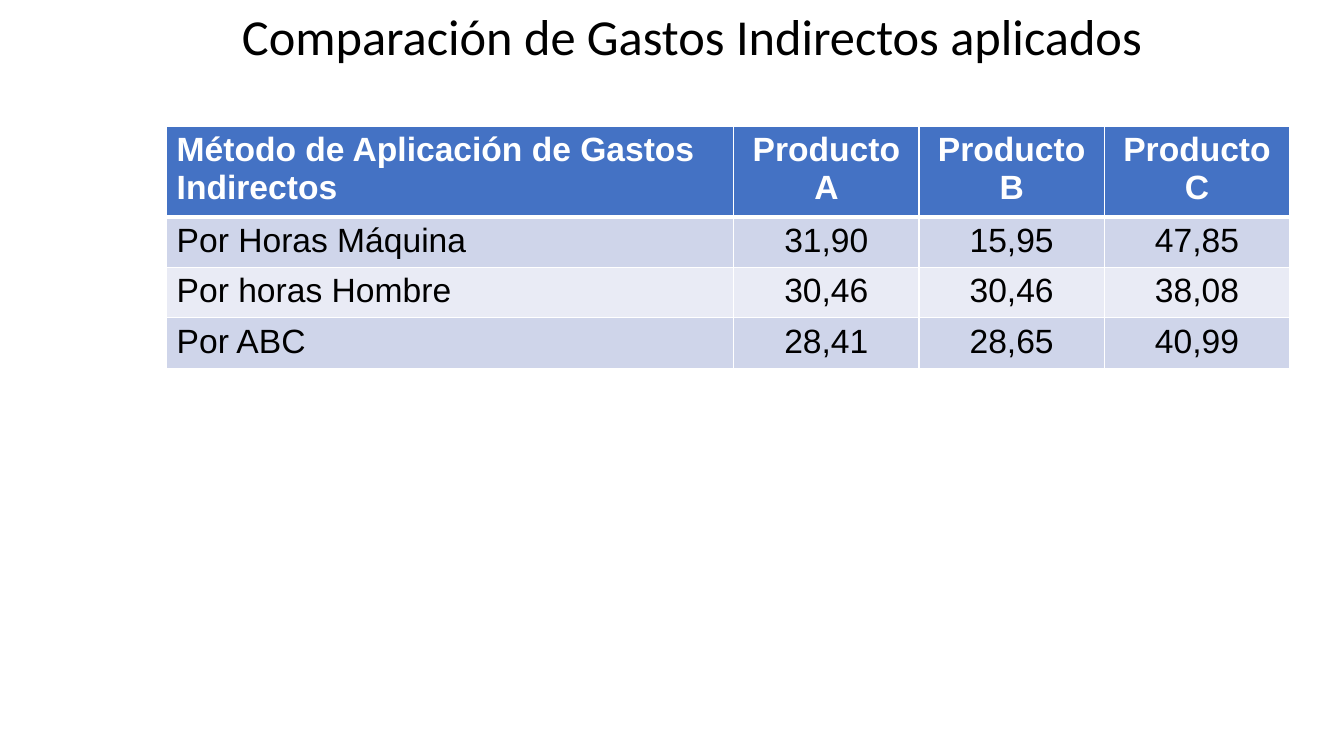
import pptx
import pptx.util
import pptx.dml.color
import pptx.enum.text
import pptx.oxml
import pptx.oxml.ns
from dataclasses import dataclass

Cm = pptx.util.Cm
Align = pptx.enum.text.PP_ALIGN


@dataclass(frozen=True)
class Theme:
    head: str = "4472C4"
    bands: tuple = ("CFD5EA", "E9EBF5")
    light: str = "FFFFFF"
    dark: str = "000000"
    title: int = 36
    body: int = 24


theme = Theme()


def style(par, face, size, color, bold=False):
    for run in par.runs:
        run.font.name = face
        run.font.size = pptx.util.Pt(size)
        run.font.bold = bold
        run.font.color.rgb = pptx.dml.color.RGBColor.from_string(color)


def border(cell, base):
    """Draw the four cell edges, with the bottom one base points wide."""
    props = cell._tc.get_or_add_tcPr()
    for spot, (side, width) in enumerate(zip("LRTB", (1, 1, 1, base))):
        edge = pptx.oxml.parse_xml(
            f'<a:ln{side} {pptx.oxml.ns.nsdecls("a")} w="{pptx.util.Pt(width)}">'
            f'<a:solidFill><a:srgbClr val="{theme.light}"/></a:solidFill></a:ln{side}>')
        props.insert(spot, edge)


deck = pptx.Presentation()
deck.slide_width, deck.slide_height = Cm(33.87), Cm(19.05)
slide = deck.slides.add_slide(deck.slide_layouts[6])

title = slide.shapes.add_textbox(Cm(2.84), Cm(-0.84), Cm(29.21), Cm(3.68))
frame = title.text_frame
frame.word_wrap = True
frame.vertical_anchor = pptx.enum.text.MSO_ANCHOR.MIDDLE
frame.text = "Comparación de Gastos Indirectos aplicados"
par = frame.paragraphs[0]
par.alignment = Align.CENTER
par.line_spacing = 0.9
style(par, "Calibri", theme.title, theme.dark)

rows = [
    ("Método de Aplicación de Gastos Indirectos", "Producto A", "Producto B", "Producto C"),
    ("Por Horas Máquina", "31,90", "15,95", "47,85"),
    ("Por horas Hombre", "30,46", "30,46", "38,08"),
    ("Por ABC", "28,41", "28,65", "40,99"),
]
widths = (14.29, 4.67, 4.67, 4.67)
heights = (2.14, 1.2, 1.2, 1.2)

table = slide.shapes.add_table(len(rows), len(widths), Cm(4.2), Cm(3.18),
                               Cm(sum(widths)), Cm(sum(heights))).table
for col, width in zip(table.columns, widths):
    col.width = Cm(width)

for r, texts in enumerate(rows):
    table.rows[r].height = Cm(heights[r])
    top = r == 0
    fill = theme.head if top else theme.bands[(r - 1) % 2]
    for c, text in enumerate(texts):
        cell = table.cell(r, c)
        cell.text_frame.text = text
        par = cell.text_frame.paragraphs[0]
        par.alignment = Align.CENTER if c else Align.LEFT
        style(par, "Arial", theme.body, theme.light if top else theme.dark, top)
        cell.fill.solid()
        cell.fill.fore_color.rgb = pptx.dml.color.RGBColor.from_string(fill)
        border(cell, 3 if top else 1)
        if r == 1:
            cell._tc.tcPr.find(pptx.oxml.ns.qn("a:lnT")).set("w", str(pptx.util.Pt(3)))

deck.save("out.pptx")
